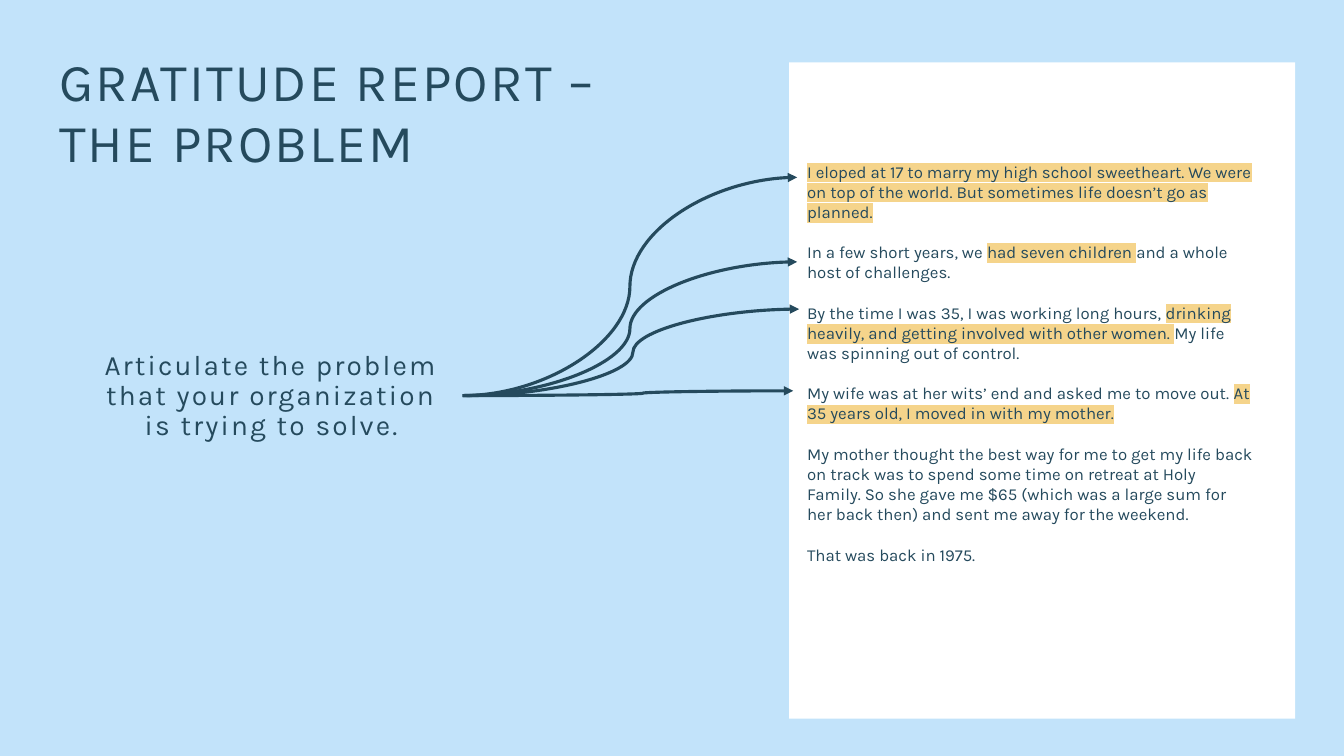
from lxml import etree
from pptx import Presentation
from pptx.dml.color import RGBColor
from pptx.enum.shapes import MSO_CONNECTOR, MSO_SHAPE
from pptx.enum.text import MSO_ANCHOR, PP_ALIGN
from pptx.oxml.ns import qn
from pptx.util import Cm, Pt

CURVE = MSO_CONNECTOR.CURVE
RECT = MSO_SHAPE.RECTANGLE
TOP, MIDDLE = MSO_ANCHOR.TOP, MSO_ANCHOR.MIDDLE
LEFT, CENTER = PP_ALIGN.LEFT, PP_ALIGN.CENTER

FONT = "Karla"
COLORS = {"sky": "C2E3FA", "page": "FFFFFF", "ink": "254A5D", "mark": "F5D48B"}
WIDTH, HEIGHT = 33.87, 19.05

TITLE = [[("GRATITUDE REPORT –", False)], [("THE PROBLEM", False)]]
CAPTION = [[("Articulate the problem that your organization is trying to solve.", False)]]
STORY = [
    [("I eloped at 17 to marry my high school sweetheart. We were on top of the world. "
      "But sometimes life doesn’t go as planned.", True)],
    [("In a few short years, we ", False), ("had seven children ", True),
     ("and a whole host of challenges.", False)],
    [("By the time I was 35, I was working long hours, ", False),
     ("drinking heavily, and getting involved with other women. ", True),
     ("My life was spinning out of control.", False)],
    [("My wife was at her wits’ end and asked me to move out. ", False),
     ("At 35 years old, I moved in with my mother.", True)],
    [("My mother thought the best way for me to get my life back on track was to spend "
      "some time on retreat at Holy Family. So she gave me $65 (which was a large sum "
      "for her back then) and sent me away for the weekend.", False)],
    [("That was back in 1975.", False)],
]

ARROW_Y = 9.97
ARROWS = [
    (11.66, 20.09, 4.47, 50000),
    (11.66, 20.09, 6.6, 50000),
    (11.76, 20.14, 7.79, 50000),
    (11.66, 19.99, 9.85, 54500),
]


def rgb(name):
    return RGBColor.from_string(COLORS[name])


def add_panel(s, color, x, y, w, h):
    sp = s.shapes.add_shape(RECT, Cm(x), Cm(y), Cm(w), Cm(h))
    sp.shadow.inherit = False
    sp.fill.solid()
    sp.fill.fore_color.rgb = rgb(color)
    sp.line.fill.background()


def highlight(r):
    mark = etree.SubElement(r.font._element, qn("a:highlight"))
    etree.SubElement(mark, qn("a:srgbClr"), val=COLORS["mark"])


def add_text(s, paragraphs, box, size, gap, anchor=MIDDLE, align=LEFT,
             line_spacing=0.9, tracking=150):
    tf = s.shapes.add_textbox(*map(Cm, box)).text_frame
    tf.word_wrap = True
    tf.vertical_anchor = anchor
    for i, runs in enumerate(paragraphs):
        p = tf.add_paragraph() if i else tf.paragraphs[0]
        p.alignment = align
        p.line_spacing = line_spacing
        p.space_before = Pt(gap if i else 0)
        p.font.name = FONT
        p.font.size = Pt(size)
        p.font.color.rgb = rgb("ink")
        for text, marked in runs:
            r = p.add_run()
            r.text = text
            if tracking:
                r.font._element.set("spc", str(tracking))
            if marked:
                highlight(r)


def add_arrow(s, x1, x2, y2, bend):
    cx = s.shapes.add_connector(CURVE, Cm(x1), Cm(ARROW_Y), Cm(x2), Cm(y2))
    cx.line.color.rgb = rgb("ink")
    cx.line.width = Pt(2.25)
    etree.SubElement(cx.line._get_or_add_ln(), qn("a:tailEnd"), type="triangle")
    spPr = cx._element.spPr
    etree.SubElement(spPr, qn("a:effectLst"))
    guides = spPr.find(qn("a:prstGeom")).get_or_add_avLst()
    etree.SubElement(guides, qn("a:gd"), name="adj1", fmla=f"val {bend}")


def main():
    """Build the gratitude report slide."""
    prs = Presentation()
    prs.slide_width, prs.slide_height = Cm(WIDTH), Cm(HEIGHT)
    s = prs.slides.add_slide(prs.slide_layouts[6])
    add_panel(s, "sky", 0, 0, WIDTH, HEIGHT)
    add_text(s, TITLE, (1.24, 1.32, 29.21, 3.15), 38, 2)
    add_panel(s, "page", 19.89, 1.57, 12.75, 16.54)
    add_text(s, CAPTION, (2.01, 8.84, 9.65, 2.29), 20, 0, align=CENTER)
    add_text(s, STORY, (20.09, 3.94, 11.76, 12.07), 12, 14.4, TOP,
             line_spacing=1.0, tracking=0)
    for arrow in ARROWS:
        add_arrow(s, *arrow)
    prs.save("out.pptx")


if __name__ == "__main__":
    main()
